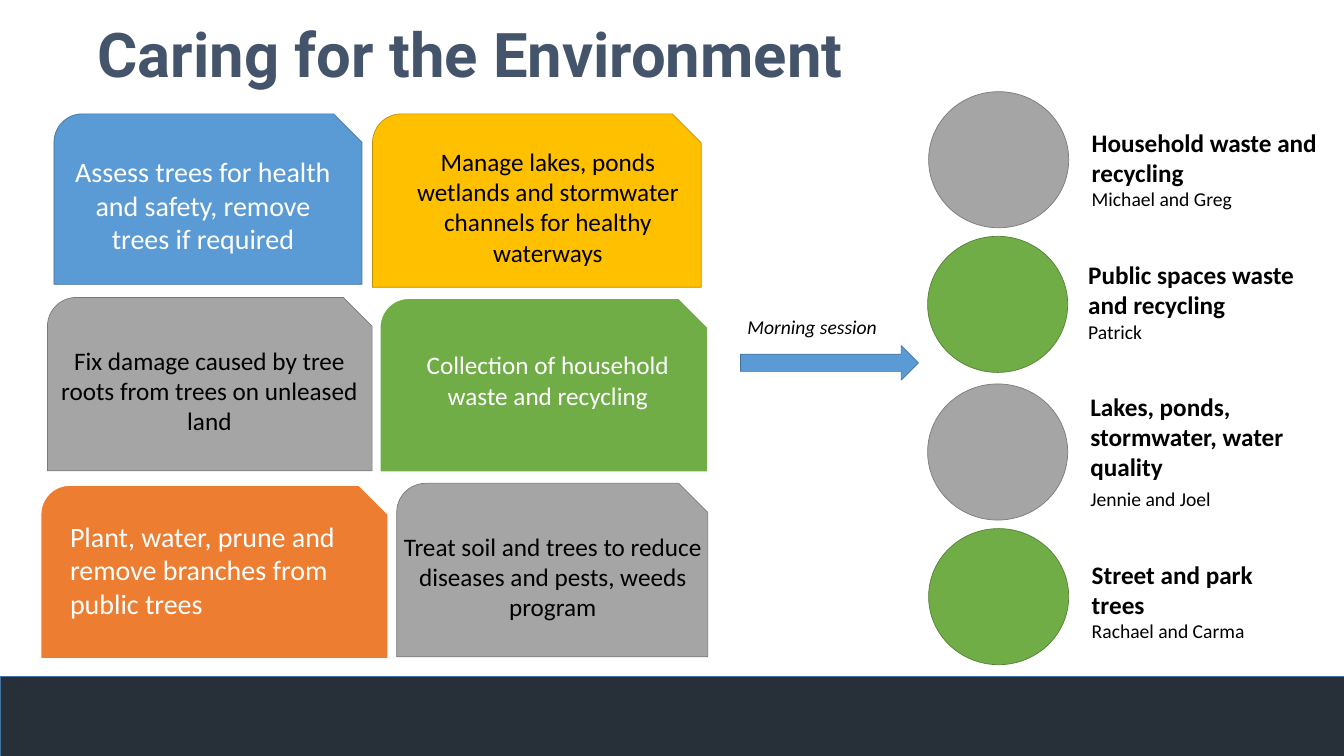
from dataclasses import dataclass
from typing import NamedTuple

from pptx import Presentation
from pptx.dml.color import RGBColor as RGB
from pptx.enum.shapes import MSO_SHAPE as Shape
from pptx.enum.text import MSO_ANCHOR as Anchor, MSO_AUTO_SIZE as AutoSize, PP_ALIGN as Align
from pptx.util import Cm, Pt


class Paint(NamedTuple):
    fill: str
    line: str
    weight: float = 1


@dataclass(frozen=True)
class Theme:
    blue: Paint = Paint("5B9BD5", "43739E")
    grey: Paint = Paint("A5A5A5", "7A7A7A")
    yellow: Paint = Paint("FFC000", "BD8E00")
    orange: Paint = Paint("ED7D31", "FFFFFF", 1.5)
    green: Paint = Paint("70AD47", "FFFFFF", 1.5)
    green_circle: Paint = Paint("70AD47", "538035")
    band: Paint = Paint("273039", "43739E")
    title: str = "44546A"
    light: str = "FFFFFF"
    dark: str = "000000"
    title_font: str = "Roboto"
    body_font: str = "Calibri"
    title_size: int = 88
    large: int = 40
    medium: int = 36
    small: int = 28


T = Theme()


class Box(NamedTuple):
    """Left, top, width and height in centimetres."""
    left: float
    top: float
    width: float
    height: float

    def lengths(self) -> list[Cm]:
        return [Cm(v) for v in self]


@dataclass(frozen=True)
class Card:
    box: Box
    paint: Paint
    text: str
    text_box: Box
    size: int = T.medium
    color: str = T.dark
    align: Align = Align.CENTER


@dataclass(frozen=True)
class Team:
    circle_left: float
    circle_top: float
    paint: Paint
    task: str
    people: str
    text_box: Box
    gap: float = 0


CARDS = [
    Card(Box(2.06, 24.46, 17.48, 8.74), T.orange,
         "Plant, water, prune and remove branches from public trees",
         Box(3.28, 26.04, 15.19, 5.38), T.large, T.light, Align.LEFT),
    Card(Box(2.72, 5.74, 15.52, 8.59), T.blue,
         "Assess trees for health and safety, remove trees if required",
         Box(3.28, 7.67, 13.89, 5.38), T.large, T.light),
    Card(Box(19.99, 24.36, 15.67, 8.74), T.grey,
         "Treat soil and trees to reduce diseases and pests, weeds program",
         Box(19.99, 26.64, 15.72, 4.88)),
    Card(Box(2.39, 14.99, 16.36, 8.74), T.grey,
         "Fix damage caused by tree roots from trees on unleased land",
         Box(2.31, 17.27, 16.48, 4.88)),
    Card(Box(19.15, 15.04, 16.51, 8.74), T.green,
         "Collection of household waste and recycling",
         Box(19.89, 17.5, 15.42, 3.33), color=T.light),
    Card(Box(18.77, 5.74, 16.56, 8.74), T.yellow,
         "Manage lakes, ponds wetlands and stormwater channels for healthy waterways",
         Box(19.53, 7.24, 16.15, 6.4)),
]

CIRCLE_WIDTH, CIRCLE_HEIGHT = 7.06, 6.86
TEAMS = [
    Team(46.79, 4.62, T.grey, "Household waste and recycling", "Michael and Greg",
         Box(54.76, 6.27, 12.01, 6.07)),
    Team(46.74, 11.91, T.green_circle, "Public spaces waste and recycling", "Patrick",
         Box(54.58, 12.93, 12.01, 4.52)),
    Team(46.74, 19.35, T.grey, "Lakes, ponds, stormwater, water quality", "Jennie and Joel",
         Box(54.69, 19.58, 11.46, 6.4), gap=8),
    Team(46.79, 26.64, T.green_circle, "Street and park trees", "Rachael and Carma",
         Box(54.76, 28.04, 11.4, 4.52)),
]


def add_shape(s, kind: Shape, box: Box, paint: Paint) -> None:
    sp = s.shapes.add_shape(kind, *box.lengths())
    sp.shadow.inherit = False
    sp.fill.solid()
    sp.fill.fore_color.rgb = RGB.from_string(paint.fill)
    sp.line.color.rgb = RGB.from_string(paint.line)
    sp.line.width = Pt(paint.weight)


def add_run(p, text: str, size: int, color: str = T.dark, font: str = T.body_font,
            bold: bool = False, italic: bool = False) -> None:
    r = p.add_run()
    r.text = text
    f = r.font
    f.name, f.size, f.bold, f.italic = font, Pt(size), bold, italic
    f.color.rgb = RGB.from_string(color)


def add_text_frame(s, box: Box):
    tf = s.shapes.add_textbox(*box.lengths()).text_frame
    tf.word_wrap = True
    return tf


def add_title(s, text: str, box: Box) -> None:
    sp = s.shapes.title
    sp.left, sp.top, sp.width, sp.height = box.lengths()
    tf = sp.text_frame
    tf.word_wrap = False
    tf.auto_size = AutoSize.NONE
    tf.vertical_anchor = Anchor.TOP
    p = tf.paragraphs[0]
    p.alignment = Align.CENTER
    add_run(p, text, T.title_size, T.title, T.title_font, bold=True)


def add_card(s, card: Card) -> None:
    add_shape(s, Shape.SNIP_ROUND_RECTANGLE, card.box, card.paint)
    p = add_text_frame(s, card.text_box).paragraphs[0]
    p.alignment = card.align
    add_run(p, card.text, card.size, card.color)


def add_team(s, team: Team) -> None:
    circle = Box(team.circle_left, team.circle_top, CIRCLE_WIDTH, CIRCLE_HEIGHT)
    add_shape(s, Shape.OVAL, circle, team.paint)
    tf = add_text_frame(s, team.text_box)
    add_run(tf.paragraphs[0], team.task, T.medium, bold=True)
    p = tf.add_paragraph()
    p.space_before = Pt(team.gap)
    add_run(p, team.people, T.small)


def main() -> None:
    prs = Presentation()
    prs.slide_width, prs.slide_height = Cm(67.72), Cm(38.1)
    s = prs.slides.add_slide(prs.slide_layouts.get_by_name("Title Only"))

    add_shape(s, Shape.RECTANGLE, Box(0, 34.11, 67.72, 3.99), T.band)
    add_title(s, "Caring for the Environment", Box(2.97, 0.69, 41.43, 4.01))
    for card in CARDS:
        add_card(s, card)
    add_shape(s, Shape.RIGHT_ARROW, Box(37.31, 17.42, 8.97, 1.73), T.blue)
    caption = add_text_frame(s, Box(37.41, 15.77, 9.47, 1.45))
    add_run(caption.paragraphs[0], "Morning session", T.small, italic=True)
    for team in TEAMS:
        add_team(s, team)

    prs.save("out.pptx")


if __name__ == "__main__":
    main()
